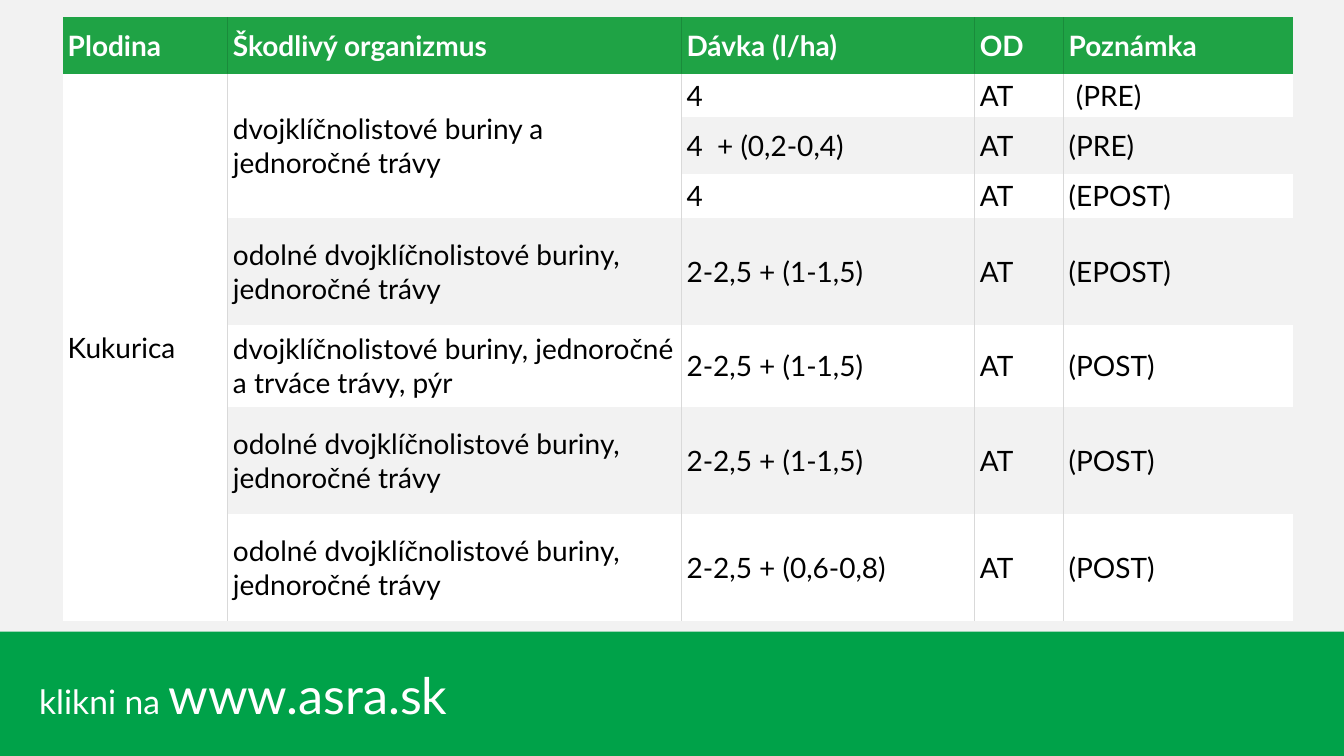
from lxml import etree
from pptx import Presentation
from pptx.dml.color import RGBColor
from pptx.enum.shapes import MSO_SHAPE
from pptx.enum.text import MSO_ANCHOR, MSO_AUTO_SIZE
from pptx.oxml.ns import qn
from pptx.util import Pt

RECT = MSO_SHAPE.RECTANGLE
MIDDLE = MSO_ANCHOR.MIDDLE
FIT = MSO_AUTO_SIZE.SHAPE_TO_FIT_TEXT


def rgb(value):
    return RGBColor.from_string(value)


def add_run(p, text, size, color, bold=False):
    r = p.add_run()
    r.text = text
    r.font.name = "Lato"
    r.font.size = Pt(size)
    r.font.bold = bold
    r.font.color.rgb = rgb(color)


prs = Presentation()
prs.slide_width, prs.slide_height = Pt(960), Pt(540)
s = prs.slides.add_slide(prs.slide_layouts[6])
s.background.fill.solid()
s.background.fill.fore_color.rgb = rgb("F2F2F2")

footer = s.shapes.add_shape(RECT, Pt(0), Pt(451.2), Pt(960), Pt(88.8))
footer.shadow.inherit = False
footer.fill.solid()
footer.fill.fore_color.rgb = rgb("00A249")
footer.line.fill.background()

link = s.shapes.add_textbox(Pt(20.9), Pt(470.9), Pt(313.2), Pt(51))
tf = link.text_frame
tf.word_wrap = False
tf.auto_size = FIT
p = tf.paragraphs[0]
add_run(p, "klikni na ", 24, "FFFFFF")
add_run(p, "www.asra.sk", 36, "FFFFFF")

resistant = "odolné dvojklíčnolistové buriny, jednoročné trávy"
rows = [
    ["Plodina", "Škodlivý organizmus", "Dávka (l/ha)", "OD", "Poznámka"],
    ["Kukurica", "dvojklíčnolistové buriny a jednoročné trávy", "4", "AT", " (PRE)"],
    ["", "", "4  + (0,2-0,4)", "AT", "(PRE)"],
    ["", "", "4", "AT", "(EPOST)"],
    ["", resistant, "2-2,5 + (1-1,5)", "AT", "(EPOST)"],
    ["", "dvojklíčnolistové buriny, jednoročné a trváce trávy, pýr",
     "2-2,5 + (1-1,5)", "AT", "(POST)"],
    ["", resistant, "2-2,5 + (1-1,5)", "AT", "(POST)"],
    ["", resistant, "2-2,5 + (0,6-0,8)", "AT", "(POST)"],
]
widths = [118, 324, 209.5, 63.5, 164]
heights = [40.5, 31, 40.5, 31, 76.5, 58.5, 76.5, 76.5]

table = s.shapes.add_table(len(rows), len(widths), Pt(44.8), Pt(12.2),
                           Pt(sum(widths)), Pt(sum(heights))).table
for column, width in zip(table.columns, widths):
    column.width = Pt(width)
for row, height in zip(table.rows, heights):
    row.height = Pt(height)
table.cell(1, 0).merge(table.cell(7, 0))
table.cell(1, 1).merge(table.cell(3, 1))

for i, row in enumerate(rows):
    header = i == 0
    for j, text in enumerate(row):
        cell = table.cell(i, j)
        cell.vertical_anchor = MIDDLE
        cell.margin_left = cell.margin_right = Pt(3.6)
        cell.margin_top = cell.margin_bottom = Pt(3.6)
        banded = i % 2 == 0 and not cell.is_spanned
        cell.fill.solid()
        cell.fill.fore_color.rgb = rgb("1FA345" if header else "F2F2F2" if banded else "FFFFFF")
        if text:
            add_run(cell.text_frame.paragraphs[0], text, 20,
                    "FFFFFF" if header else "000000", header)

        inner = {"lnL": j > 0, "lnR": j < len(widths) - 1, "lnT": False, "lnB": False}
        tcPr = cell._tc.get_or_add_tcPr()
        for k, (side, visible) in enumerate(inner.items()):
            ln = etree.Element(qn("a:" + side), w=str(Pt(0.75)))
            tcPr.insert(k, ln)
            if visible:
                fill = etree.SubElement(ln, qn("a:solidFill"))
                etree.SubElement(fill, qn("a:srgbClr"), val="1A8B3B" if header else "D9D9D9")
            else:
                etree.SubElement(ln, qn("a:noFill"))

prs.save("out.pptx")
